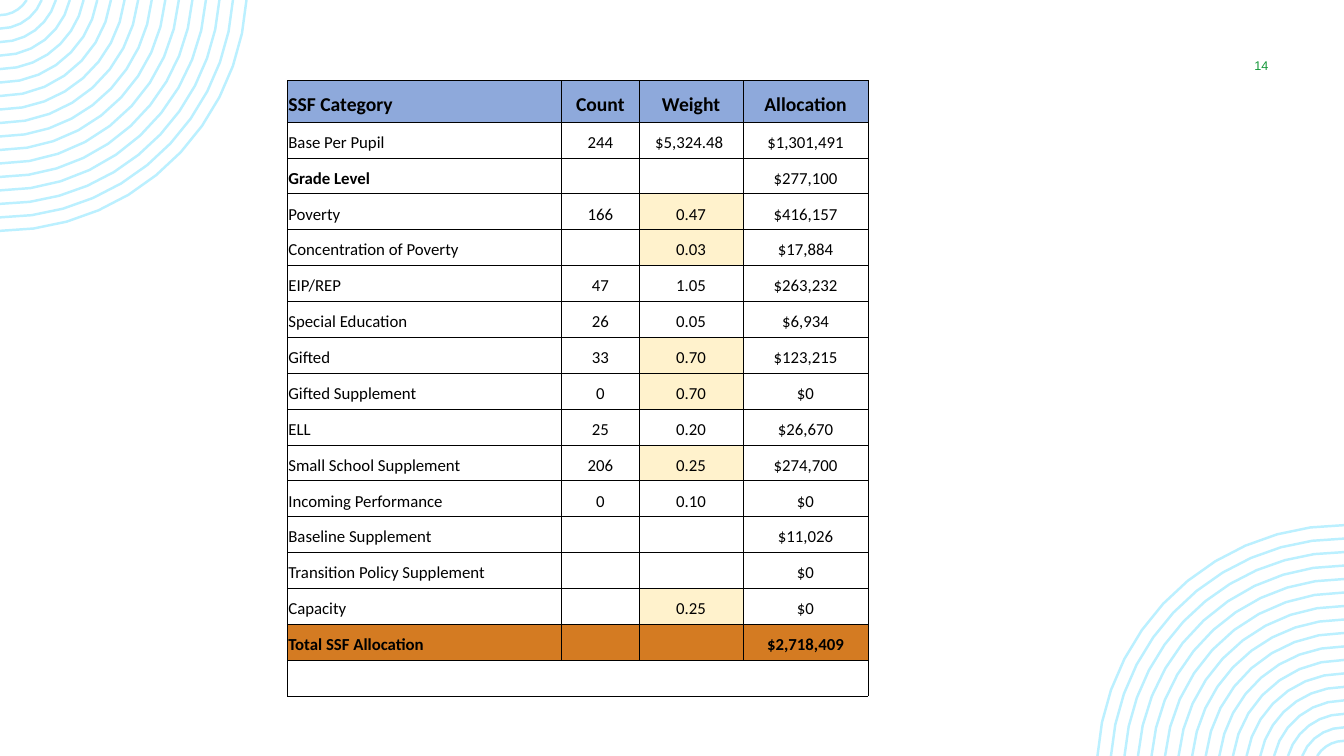
from math import asin, cos, pi, sin

from pptx import Presentation
from pptx.dml.color import RGBColor as Rgb
from pptx.enum.text import MSO_ANCHOR as Anchor, PP_ALIGN as Align
from pptx.oxml.ns import qn
from pptx.util import Inches, Pt
from lxml.etree import SubElement as Sub

WIDE, HIGH = 13.33, 7.5
BLACK = Rgb(0, 0, 0)
GREEN = Rgb(0x15, 0x98, 0x39)
AQUA = Rgb(0xBB, 0xF0, 0xFF)
BLUE = Rgb(0x8E, 0xA9, 0xDB)
CREAM = Rgb(0xFF, 0xF2, 0xCC)
ORANGE = Rgb(0xD4, 0x7B, 0x22)

COLS = [2.72, 0.77, 1.03, 1.24, 0.38]
ROWS = [
    ("SSF Category", "Count", "Weight", "Allocation"),
    ("Base Per Pupil", "244", "$5,324.48 ", "$1,301,491"),
    ("Grade Level", "", "", "$277,100"),
    ("Poverty", "166", "0.47", "$416,157"),
    ("Concentration of Poverty", "", "0.03", "$17,884"),
    ("EIP/REP", "47", "1.05", "$263,232"),
    ("Special Education", "26", "0.05", "$6,934"),
    ("Gifted", "33", "0.70", "$123,215"),
    ("Gifted Supplement", "0", "0.70", "$0"),
    ("ELL", "25", "0.20", "$26,670"),
    ("Small School Supplement", "206", "0.25", "$274,700"),
    ("Incoming Performance", "0", "0.10", "$0"),
    ("Baseline Supplement", "", "", "$11,026"),
    ("Transition Policy Supplement", "", "", "$0"),
    ("Capacity", "", "0.25", "$0"),
    ("Total SSF Allocation", "", "", "$2,718,409"),
    ("", "", "", ""),
]
LAST = len(ROWS) - 1
TOTAL = LAST - 1
MARKED = {3, 4, 7, 8, 10, 14}


def add_run(para, text, font, size, color, bold=False):
    """Add one formatted run to a paragraph."""
    run = para.add_run()
    run.text = text
    run.font.name, run.font.size = font, Pt(size)
    run.font.bold, run.font.color.rgb = bold, color


def arc(radius, drop, turn):
    """Return points of an arc from the slide's top edge to its side edge."""
    start = asin(drop / radius)
    steps = 4 + round(3 * radius)
    points = []
    for i in range(steps + 1):
        angle = start + (pi / 2 - start) * i / steps
        x, y = radius * cos(angle), radius * sin(angle) - drop
        if turn:
            x, y = WIDE - x, HIGH - y
        points.append((Inches(x), Inches(y)))
    return points


def add_rings(slide, turn=False):
    """Draw the corner rings, turned half round for the lower right corner."""
    count, outer, inner, drop = 17, 2.45, 0.31, 0.16
    gap = (outer - inner) / (count - 1)
    first, *others = [arc(outer - i * gap, drop, turn) for i in range(count)]
    pen = slide.shapes.build_freeform(*first[0], scale=1.0)
    pen.add_line_segments(first[1:], close=False)
    for points in others:
        pen.move_to(*points[0])
        pen.add_line_segments(points[1:], close=False)
    rings = pen.convert_to_shape()
    rings.shadow.inherit = False
    rings.fill.background()
    rings.line.color.rgb = AQUA
    rings.line.width = Pt(1.75)


def set_edges(cell, sides):
    """Rule the named sides of a cell and clear the others."""
    props = cell._tc.get_or_add_tcPr()
    for side in "LRTB":
        edge = Sub(props, qn("a:ln" + side), w=str(Pt(0.5)))
        if side in sides:
            fill = Sub(edge, qn("a:solidFill"))
            Sub(fill, qn("a:srgbClr"), val=str(BLACK))
        else:
            Sub(edge, qn("a:noFill"))


def find_sides(row, col):
    """Return the ruled sides of a cell."""
    if col == 4:
        return "L"
    if row == LAST:
        return "TB" + {0: "L", 3: "R"}.get(col, "")
    return "LRTB"


def find_fill(row, col):
    """Return the fill colour of a cell, or None."""
    if col == 4:
        return None
    if col == 2 and row in MARKED:
        return CREAM
    return {0: BLUE, TOTAL: ORANGE}.get(row)


def fill_cell(cell, row, col, text):
    """Format one cell and write its text."""
    set_edges(cell, find_sides(row, col))
    color = find_fill(row, col)
    if color is None:
        cell.fill.background()
    else:
        cell.fill.solid()
        cell.fill.fore_color.rgb = color
    cell.margin_left = cell.margin_right = cell.margin_top = Inches(0.01)
    cell.margin_bottom = Inches(0.05 if text else 0.01)
    cell.vertical_anchor = Anchor.BOTTOM
    if text:
        para = cell.text_frame.paragraphs[0]
        para.alignment = Align.CENTER if col else Align.LEFT
        bold = row in (0, TOTAL) or text == "Grade Level"
        add_run(para, text, "Calibri", 12 if row else 14, BLACK, bold)


def add_grid(slide):
    """Add the allocation table."""
    high, head = 6.11, 0.41
    frame = slide.shapes.add_table(
        len(ROWS), len(COLS), Inches(2.85), Inches(0.8),
        Inches(sum(COLS)), Inches(high))
    table = frame.table
    table.first_row = table.horz_banding = False
    for col, wide in zip(table.columns, COLS):
        col.width = Inches(wide)
    for r, texts in enumerate(ROWS):
        table.rows[r].height = Inches((high - head) / LAST if r else head)
        for c, text in enumerate(texts + ("",)):
            fill_cell(table.cell(r, c), r, c, text)


def add_page(slide, text):
    """Add the page number."""
    box = slide.shapes.add_textbox(
        Inches(11.97), Inches(0.5), Inches(1.08), Inches(0.3))
    frame = box.text_frame
    frame.word_wrap = True
    frame.vertical_anchor = Anchor.MIDDLE
    para = frame.paragraphs[0]
    para.alignment = Align.CENTER
    add_run(para, text, "Arial", 9, GREEN)


def main():
    """Build and save the slide."""
    deck = Presentation()
    deck.slide_width, deck.slide_height = Inches(WIDE), Inches(HIGH)
    slide = deck.slides.add_slide(deck.slide_layouts[6])
    add_rings(slide)
    add_rings(slide, turn=True)
    add_page(slide, "14")
    add_grid(slide)
    deck.save("out.pptx")


if __name__ == "__main__":
    main()
